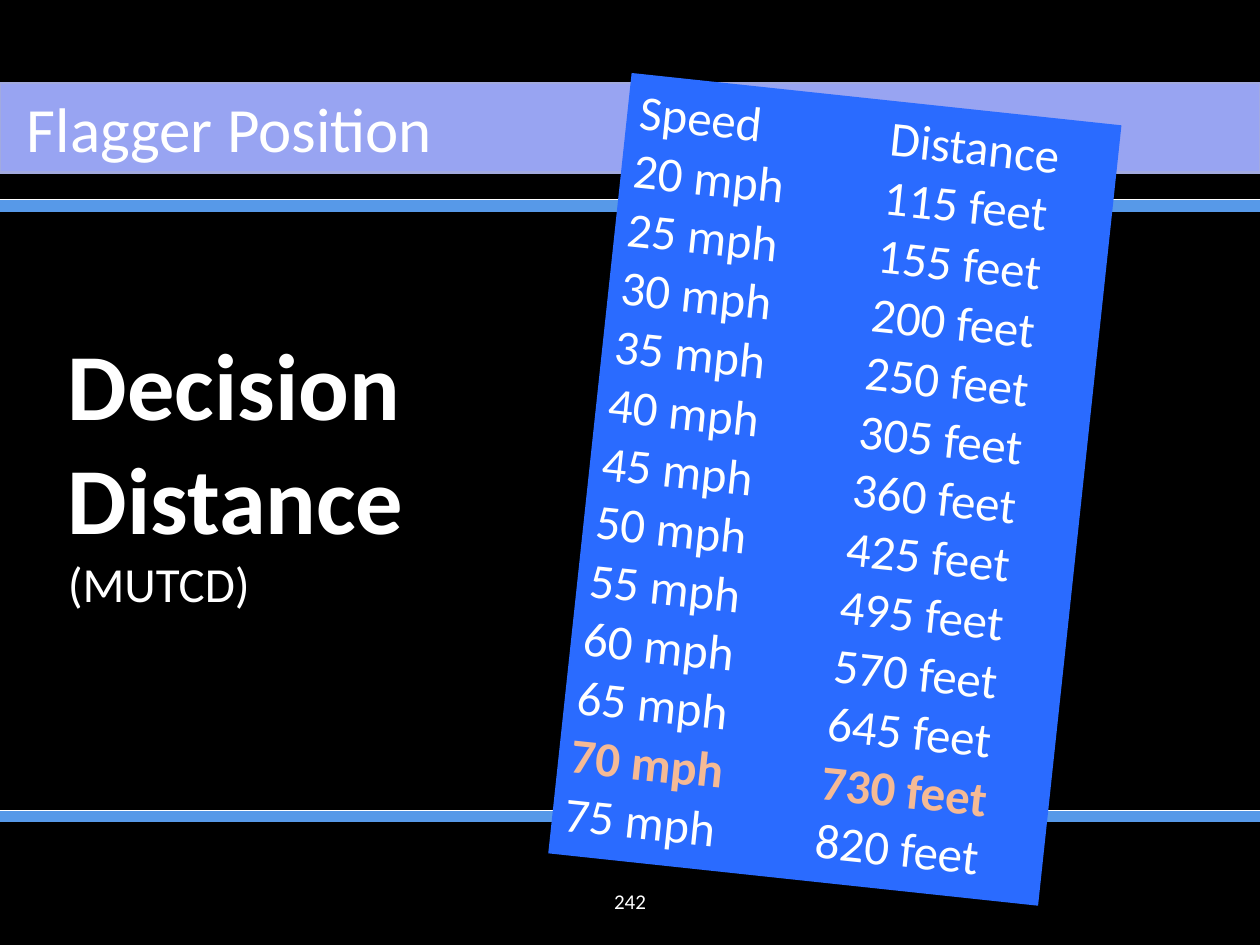
from lxml.etree import SubElement
from pptx import Presentation
from pptx.dml.color import RGBColor
from pptx.enum.shapes import MSO_CONNECTOR, MSO_SHAPE
from pptx.enum.text import MSO_ANCHOR, MSO_AUTO_SIZE, PP_ALIGN
from pptx.oxml.ns import qn
from pptx.util import Pt

BLACK = RGBColor(0x00, 0x00, 0x00)
WHITE = RGBColor(0xFF, 0xFF, 0xFF)
RULE_BLUE = RGBColor(0x57, 0x99, 0xE8)
BAND = RGBColor(0x98, 0xA4, 0xF2)
BAND_EDGE = RGBColor(0xA2, 0xAA, 0xDF)
PANEL_BLUE = RGBColor(0x2A, 0x6B, 0xFF)
PEACH = RGBColor(0xF5, 0xBA, 0x95)

PAGE_WIDTH, PAGE_HEIGHT = 720, 540
DISTANCES = {20: 115, 25: 155, 30: 200, 35: 250, 40: 305, 45: 360,
             50: 425, 55: 495, 60: 570, 65: 645, 70: 730, 75: 820}
HIGHLIGHTED_SPEED = 70


def add_span(para, text, size=28, color=WHITE, bold=False):
    span = para.add_run()
    span.text = text
    span.font.name = "Calibri"
    span.font.size = Pt(size)
    span.font.bold = bold
    span.font.color.rgb = color


def prepare_frame(box, anchor=MSO_ANCHOR.TOP, align=PP_ALIGN.LEFT):
    frame = box.text_frame
    frame.word_wrap = True
    frame.auto_size = MSO_AUTO_SIZE.NONE
    frame.vertical_anchor = anchor
    frame.paragraphs[0].alignment = align
    return frame


def add_text_box(page, left, top, width, height, **layout):
    box = page.shapes.add_textbox(Pt(left), Pt(top), Pt(width), Pt(height))
    return prepare_frame(box, **layout).paragraphs[0]


def add_rule(page, y, color, weight):
    rule = page.shapes.add_connector(
        MSO_CONNECTOR.STRAIGHT, Pt(0), Pt(y), Pt(PAGE_WIDTH), Pt(y))
    rule.line.color.rgb = color
    rule.line.width = Pt(weight)
    SubElement(rule._element.spPr, qn("a:effectLst"))


def add_double_rule(page, y):
    add_rule(page, y, RULE_BLUE, 7)
    add_rule(page, y - 3.3, WHITE, 0.5)


def format_title(page, text):
    title = page.shapes.title
    title.left, title.top = Pt(0), Pt(47.5)
    title.width, title.height = Pt(PAGE_WIDTH), Pt(51)
    title.fill.solid()
    title.fill.fore_color.rgb = BAND
    title.line.color.rgb = BAND_EDGE
    title.line.width = Pt(1.5)
    frame = prepare_frame(title)
    frame.margin_left = Pt(15.3)
    add_span(frame.paragraphs[0], text, size=36)


def add_distance_panel(page):
    panel = page.shapes.add_shape(
        MSO_SHAPE.RECTANGLE, Pt(336.3), Pt(55.4), Pt(281.5), Pt(448.5))
    panel.rotation = 6.1
    panel.shadow.inherit = False
    panel.fill.solid()
    panel.fill.fore_color.rgb = PANEL_BLUE
    panel.line.fill.background()
    frame = prepare_frame(panel)

    rows = [("Speed", "Distance", False)]
    rows += [(f"{speed} mph", f"{feet} feet", speed == HIGHLIGHTED_SPEED)
             for speed, feet in DISTANCES.items()]
    for index, (speed, distance, marked) in enumerate(rows):
        para = frame.add_paragraph() if index else frame.paragraphs[0]
        para.alignment = PP_ALIGN.LEFT
        # Distance column starts at a tab stop
        tabs = SubElement(para._p.get_or_add_pPr(), qn("a:tabLst"))
        SubElement(tabs, qn("a:tab"), pos=str(Pt(144)), algn="l")
        add_span(para, f"{speed} \t{distance}",
                 color=PEACH if marked else WHITE, bold=marked)


def main():
    deck = Presentation()
    deck.slide_width, deck.slide_height = Pt(PAGE_WIDTH), Pt(PAGE_HEIGHT)
    page = deck.slides.add_slide(deck.slide_layouts[5])
    page.background.fill.solid()
    page.background.fill.fore_color.rgb = BLACK

    # Frame of the page: title band and rules
    format_title(page, "Flagger Position")
    for y in (117.5, 466.2):
        add_double_rule(page, y)

    # Speed and distance list
    add_distance_panel(page)

    # Heading
    heading = add_text_box(page, 31.7, 183, 282, 172)
    add_span(heading, "Decision Distance ", size=54, bold=True)
    add_span(heading, "(MUTCD)")

    # Page number
    number = add_text_box(page, 336, 500.5, 48, 28.8,
                          anchor=MSO_ANCHOR.MIDDLE, align=PP_ALIGN.CENTER)
    add_span(number, "242", size=12)

    deck.save("out.pptx")


if __name__ == "__main__":
    main()
